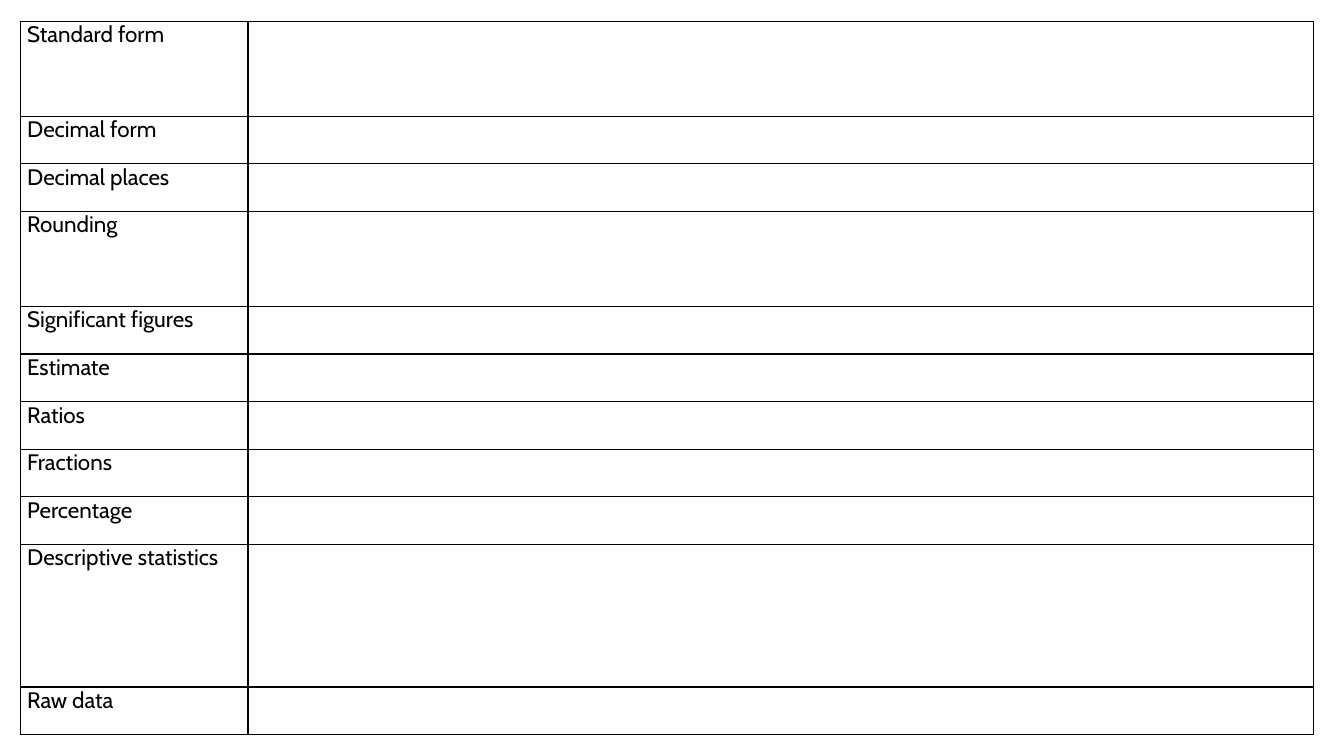
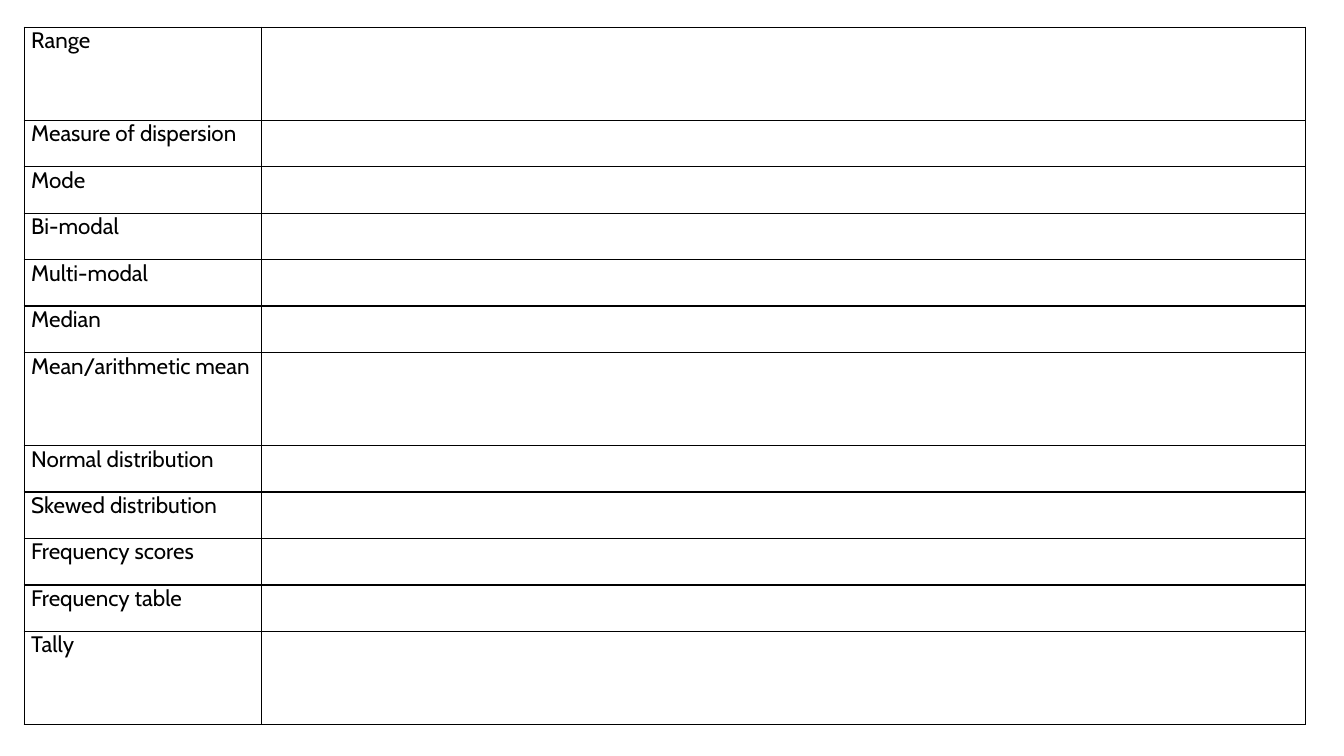
import pptx
import pptx.dml.color
import pptx.oxml
import pptx.oxml.ns
import pptx.util
from pptx.util import Inches, Pt

# Each row is a term and its height in units; the table height is shared by unit.
GLOSSARY = [
    {
        "left": 0.2, "top": 0.21, "height": 7.08, "columns": (2.26, 10.57),
        "rows": [
            ("Standard form", 2),
            ("Decimal form", 1),
            ("Decimal places", 1),
            ("Rounding", 2),
            ("Significant figures", 1),
            ("Estimate", 1),
            ("Ratios", 1),
            ("Fractions", 1),
            ("Percentage", 1),
            ("Descriptive statistics", 3),
            ("Raw data", 1),
        ],
    },
    {
        "left": 0.24, "top": 0.27, "height": 6.92, "columns": (2.35, 10.36),
        "rows": [
            ("Range", 2),
            ("Measure of dispersion", 1),
            ("Mode", 1),
            ("Bi-modal", 1),
            ("Multi-modal", 1),
            ("Median", 1),
            ("Mean/arithmetic mean", 2),
            ("Normal distribution", 1),
            ("Skewed distribution", 1),
            ("Frequency scores", 1),
            ("Frequency table", 1),
            ("Tally", 2),
        ],
    },
]

COLORS = {"text": "000000", "border": "000000"}
FONT = {"name": "Cabin", "size": Pt(16), "bold": False}
CELL = {
    "margin_left": Inches(0.07), "margin_right": Inches(0.07),
    "margin_top": 0, "margin_bottom": 0,
}
TABLE = {"first_row": False, "horz_banding": False}
BORDER_WIDTH = Pt(1)


def set_format(target, values):
    for name, value in values.items():
        setattr(target, name, value)


def add_borders(cell):
    tc_pr = cell._tc.get_or_add_tcPr()
    for side in ("lnL", "lnR", "lnT", "lnB"):
        tc_pr.append(pptx.oxml.parse_xml(
            f'<a:{side} {pptx.oxml.ns.nsdecls("a")} w="{int(BORDER_WIDTH)}">'
            f'<a:solidFill><a:srgbClr val="{COLORS["border"]}"/></a:solidFill>'
            f'</a:{side}>'))


def fill_cell(cell, text):
    set_format(cell, CELL)
    add_borders(cell)
    cell.fill.background()
    p = cell.text_frame.paragraphs[0]
    font = p.font
    if text:
        r = p.add_run()
        r.text = text
        font = r.font
    set_format(font, FONT)
    font.color.rgb = pptx.dml.color.RGBColor.from_string(COLORS["text"])


def add_glossary_slide(prs, page):
    slide = prs.slides.add_slide(prs.slide_layouts[6])
    rows, columns = page["rows"], page["columns"]
    table = slide.shapes.add_table(
        len(rows), len(columns), Inches(page["left"]), Inches(page["top"]),
        Inches(sum(columns)), Inches(page["height"])).table
    set_format(table, TABLE)
    for column, width in zip(table.columns, columns):
        column.width = Inches(width)
    unit = page["height"] / sum(units for _, units in rows)
    for row, (term, units) in zip(table.rows, rows):
        row.height = Inches(unit * units)
        for cell, text in zip(row.cells, (term, "")):
            fill_cell(cell, text)


def main():
    prs = pptx.Presentation()
    prs.slide_width, prs.slide_height = Inches(13.33), Inches(7.5)
    for page in GLOSSARY:
        add_glossary_slide(prs, page)
    prs.save("out.pptx")


if __name__ == "__main__":
    main()
